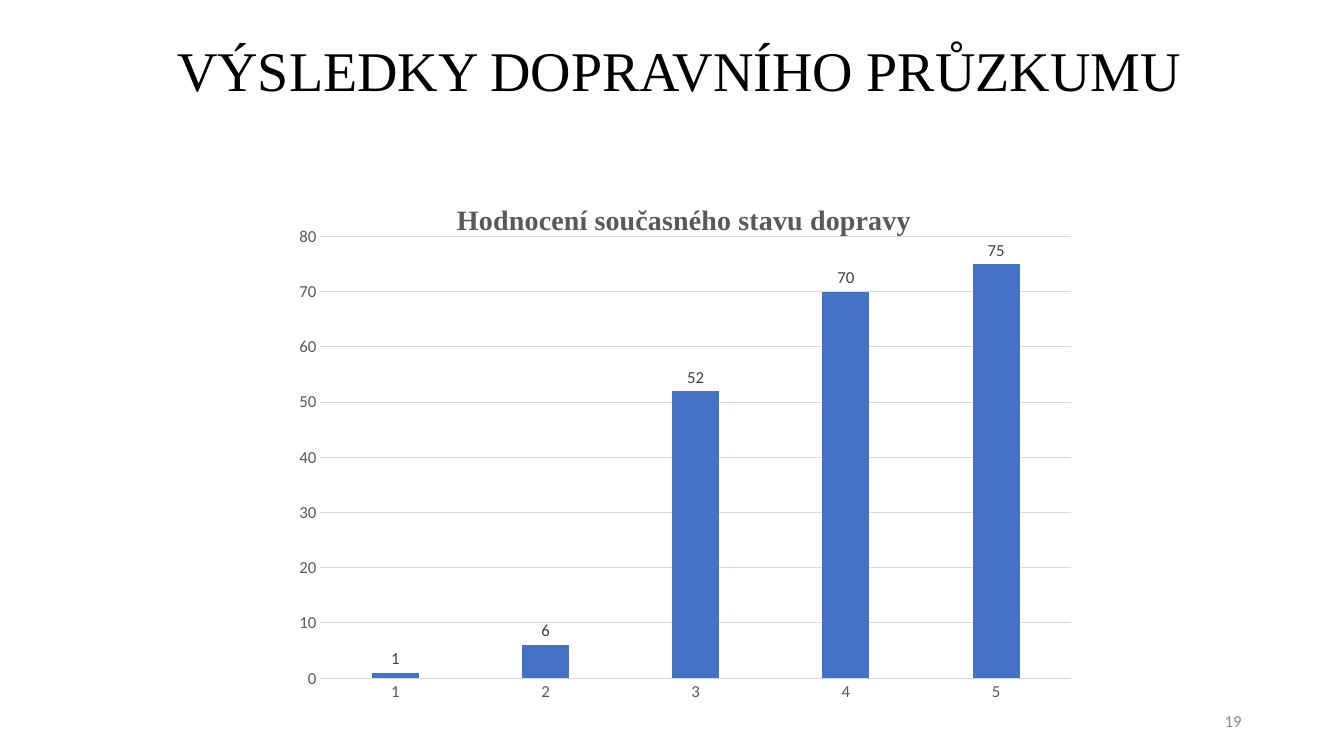
from lxml.etree import SubElement
from pptx import Presentation
from pptx.chart.data import CategoryChartData
from pptx.dml.color import RGBColor
from pptx.enum.chart import XL_CHART_TYPE, XL_LABEL_POSITION, XL_TICK_MARK
from pptx.enum.text import MSO_ANCHOR, PP_ALIGN
from pptx.oxml.ns import qn
from pptx.util import Cm, Pt

COLORS = {"black": "000000", "bar": "4472C4", "grid": "D9D9D9",
          "axis": "595959", "label": "404040", "number": "8C8C8C"}
SERIF, SANS = "Times New Roman", "Calibri"


class SlideBuilder:
    """Draws styled text and charts on one slide."""

    def __init__(self, slide):
        self.slide = slide

    def color(self, name):
        return RGBColor.from_string(COLORS[name])

    def style(self, font, name, size, color, bold=False):
        font.name, font.size, font.bold = name, Pt(size), bold
        font.color.rgb = self.color(color)

    def rule(self, line):
        line.color.rgb = self.color("grid")
        line.width = Pt(0.75)

    def text(self, text, box, align, font, size, color, spacing=1.0):
        tf = self.slide.shapes.add_textbox(*map(Cm, box)).text_frame
        tf.word_wrap = True
        tf.vertical_anchor = MSO_ANCHOR.MIDDLE
        p = tf.paragraphs[0]
        p.text, p.alignment, p.line_spacing = text, align, spacing
        self.style(p.font, font, size, color)

    def layout(self, parent, index, **values):
        for old in parent.findall(qn("c:layout")):
            parent.remove(old)
        layout = SubElement(parent, qn("c:layout"))
        parent.insert(index, layout)
        manual = SubElement(layout, qn("c:manualLayout"))
        for tag, value in values.items():
            SubElement(manual, qn(f"c:{tag}")).set("val", str(value))

    def axis(self, axis):
        axis.major_tick_mark = axis.minor_tick_mark = XL_TICK_MARK.NONE
        self.style(axis.tick_labels.font, SANS, 12, "axis")

    def column_chart(self, title, categories, values, box):
        data = CategoryChartData()
        data.categories = categories
        data.add_series("Series 1", values)
        chart = self.slide.shapes.add_chart(
            XL_CHART_TYPE.COLUMN_CLUSTERED, *map(Cm, box), data).chart
        self.style(chart.font, SANS, 10, "black")
        chart.has_legend = False

        tf = chart.chart_title.text_frame
        tf.text = title
        self.style(tf.paragraphs[0].font, SERIF, 20, "axis", True)
        self.layout(chart.chart_title._element, 1,
                    xMode="edge", yMode="edge", x=0.215, y=0.04)

        self.axis(chart.category_axis)
        self.rule(chart.category_axis.format.line)
        value_axis = chart.value_axis
        self.axis(value_axis)
        value_axis.minimum_scale, value_axis.maximum_scale = 0, 80
        value_axis.major_unit = 10
        value_axis.format.line.fill.background()
        self.rule(value_axis.major_gridlines.format.line)

        plot = chart.plots[0]
        plot.gap_width, plot.overlap = 219, -27
        plot.vary_by_categories = False
        fill = plot.series[0].format.fill
        fill.solid()
        fill.fore_color.rgb = self.color("bar")
        plot.has_data_labels = True
        labels = plot.data_labels
        labels.show_value = True
        labels.position = XL_LABEL_POSITION.OUTSIDE_END
        self.style(labels.font, SANS, 12, "label")
        self.layout(chart._chartSpace.chart.plotArea, 0, layoutTarget="inner",
                    xMode="edge", yMode="edge", x=0.051, y=0.115, w=0.936, h=0.83)


def main():
    prs = Presentation()
    prs.slide_width, prs.slide_height = Cm(33.87), Cm(19.05)
    s = SlideBuilder(prs.slides.add_slide(prs.slide_layouts[6]))
    s.text("VÝSLEDKY DOPRAVNÍHO PRŮZKUMU", (2.51, 0, 29.21, 3.68),
           PP_ALIGN.CENTER, SERIF, 40, "black", 0.9)
    s.column_chart("Hodnocení současného stavu dopravy", ["1", "2", "3", "4", "5"],
                   [1, 6, 52, 70, 75], (7.04, 4.42, 20.22, 13.41))
    s.text("19", (23.92, 17.66, 7.62, 1.01), PP_ALIGN.RIGHT, SANS, 12, "number")
    prs.save("out.pptx")


if __name__ == "__main__":
    main()
